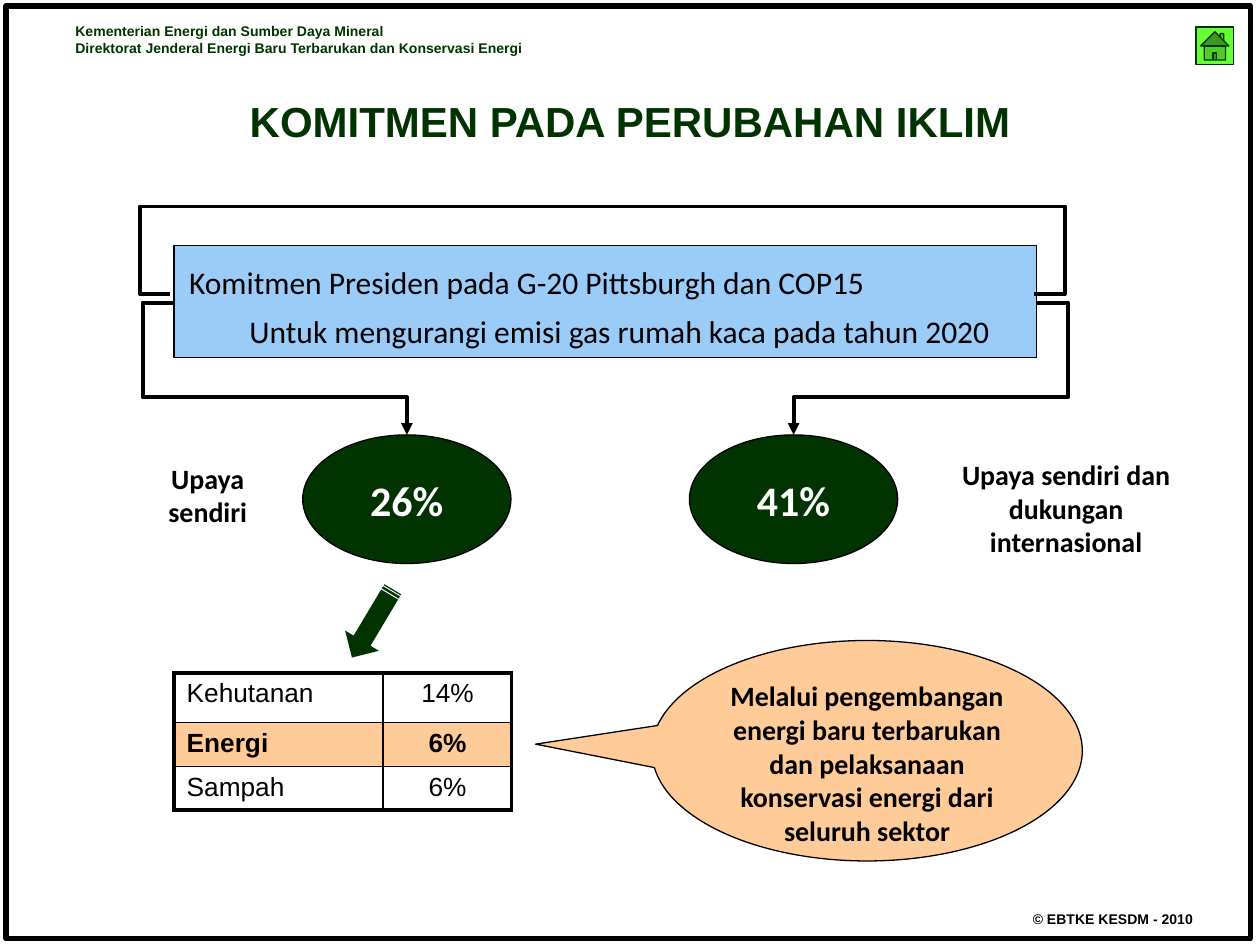
"""Build the slide on the climate change commitment."""
from dataclasses import dataclass

from lxml import etree
from pptx import Presentation
from pptx import util as u
from pptx.dml.color import RGBColor
from pptx.enum import shapes, text
from pptx.oxml import ns

BLACK, WHITE, GREEN = "000000", "FFFFFF", "003300"
PEACH, BLUE, LIME = "FFCC99", "9BCBF7", "66FF33"
LEFT, CENTER = text.PP_ALIGN.LEFT, text.PP_ALIGN.CENTER
TOP, MIDDLE = text.MSO_ANCHOR.TOP, text.MSO_ANCHOR.MIDDLE
SHAPE = shapes.MSO_SHAPE


@dataclass
class Box:
    left: float
    top: float
    width: float
    height: float

    def lengths(self) -> list:
        return [u.Pt(value) for value in (self.left, self.top, self.width, self.height)]


@dataclass
class Style:
    size: float
    font: str = "Calibri"
    color: str = BLACK
    bold: bool = True
    align: int = CENTER


@dataclass
class Label:
    box: Box
    lines: list
    style: Style


@dataclass
class Route:
    points: list
    arrow: bool = False


@dataclass
class Sector:
    name: str
    share: str
    height: float
    highlighted: bool = False


BODY = Style(16)
TARGET = Style(24, color=WHITE)
LABELS = [
    Label(Box(36, 9.4, 504, 26.6),
          ["Kementerian Energi dan Sumber Daya Mineral",
           "Direktorat Jenderal Energi Baru Terbarukan dan Konservasi Energi"],
          Style(8, "Arial", GREEN, align=LEFT)),
    Label(Box(576, 517, 120, 17), ["© EBTKE KESDM - 2010"], Style(8, "Arial")),
    Label(Box(70.5, 260, 96.5, 46), ["Upaya sendiri"], BODY),
    Label(Box(534, 258, 150.5, 65), ["Upaya sendiri dan dukungan internasional"], BODY),
]
TARGETS = [Label(Box(left, 248.5, 119, 73.5), [share], TARGET)
           for left, share in ((173, "26%"), (394, "41%"))]
ROUTES = [
    Route([(97, 168), (80, 168), (80, 118), (608.5, 118), (608.5, 168), (591, 168)]),
    Route([(99.5, 173), (81.5, 173), (81.5, 227), (232.5, 227), (232.5, 248.5)], True),
    Route([(592.5, 173), (610.5, 173), (610.5, 227), (453.5, 227), (453.5, 248.5)], True),
]
SECTORS = [Sector("Kehutanan", "14%", 28.5), Sector("Energi", "6%", 25, True),
           Sector("Sampah", "6%", 25)]


def rgb(color: str) -> RGBColor:
    return RGBColor.from_string(color)


def set_text(frame, lines: list, style: Style) -> None:
    frame.text = "\n".join(lines)
    for paragraph in frame.paragraphs:
        paragraph.alignment = style.align
        font = paragraph.font
        font.name, font.size, font.bold = style.font, u.Pt(style.size), style.bold
        font.color.rgb = rgb(style.color)


def paint(shape, fill: str | None, line: str | None, width: float = 0.75) -> None:
    shape.shadow.inherit = False
    if fill:
        shape.fill.solid()
        shape.fill.fore_color.rgb = rgb(fill)
    else:
        shape.fill.background()
    if line:
        shape.line.color.rgb = rgb(line)
        shape.line.width = u.Pt(width)
    else:
        shape.line.fill.background()


def add_shape(slide, kind: int, box: Box, fill: str | None, line: str | None = BLACK,
              width: float = 0.75):
    shape = slide.shapes.add_shape(kind, *box.lengths())
    paint(shape, fill, line, width)
    return shape


def fill_frame(shape, lines: list, style: Style, anchor: int = TOP, wrap: bool = True) -> None:
    frame = shape.text_frame
    frame.word_wrap = wrap
    frame.vertical_anchor = anchor
    set_text(frame, lines, style)


def add_route(slide, route: Route) -> None:
    points = [(u.Pt(x), u.Pt(y)) for x, y in route.points]
    builder = slide.shapes.build_freeform(*points[0])
    builder.add_line_segments(points[1:], close=False)
    shape = builder.convert_to_shape()
    paint(shape, None, BLACK, 2.25)
    if route.arrow:
        line = shape.element.spPr.find(ns.qn("a:ln"))
        etree.SubElement(line, ns.qn("a:tailEnd"), type="triangle")


def set_borders(cell, widths: dict) -> None:
    properties = cell._tc.get_or_add_tcPr()
    for side in "LRTB":
        line = etree.SubElement(properties, ns.qn(f"a:ln{side}"), w=str(u.Pt(widths[side])))
        fill = etree.SubElement(line, ns.qn("a:solidFill"))
        etree.SubElement(fill, ns.qn("a:srgbClr"), val=BLACK)


def add_sector_table(slide, box: Box, column_widths: list) -> None:
    last = len(SECTORS) - 1
    table = slide.shapes.add_table(len(SECTORS), 2, *box.lengths()).table
    table.first_row = table.horz_banding = False
    for column, width in zip(table.columns, column_widths):
        column.width = u.Pt(width)
    for row, sector in enumerate(SECTORS):
        table.rows[row].height = u.Pt(sector.height)
        for column, (value, align) in enumerate(((sector.name, LEFT), (sector.share, CENTER))):
            cell = table.cell(row, column)
            outer = {"L": column == 0, "R": column == 1, "T": row == 0, "B": row == last}
            set_borders(cell, {side: 2.25 if edge else 1 for side, edge in outer.items()})
            if sector.highlighted:
                cell.fill.solid()
                cell.fill.fore_color.rgb = rgb(PEACH)
            else:
                cell.fill.background()
            set_text(cell.text_frame, [value],
                     Style(15, "Arial", bold=sector.highlighted, align=align))


def add_title(slide) -> None:
    title = slide.shapes.title
    title.left, title.top, title.width, title.height = Box(0, 49, 720, 39.5).lengths()
    fill_frame(title, ["KOMITMEN PADA PERUBAHAN IKLIM"], Style(24, "Arial", GREEN), MIDDLE)
    title.text_frame.auto_size = text.MSO_AUTO_SIZE.NONE


def add_banner(slide) -> None:
    banner = add_shape(slide, SHAPE.RECTANGLE, Box(99.5, 140.5, 493, 64), BLUE)
    fill_frame(banner, ["Komitmen Presiden pada G-20 Pittsburgh dan COP15",
                        "Untuk mengurangi emisi gas rumah kaca pada tahun 2020"],
               Style(18, bold=False, align=LEFT))
    for paragraph, indent in zip(banner.text_frame.paragraphs, (1.5, 36)):
        paragraph.line_spacing = 1.3
        paragraph._p.get_or_add_pPr().set("marL", str(u.Pt(indent)))


def main() -> None:
    presentation = Presentation()
    presentation.slide_width, presentation.slide_height = u.Pt(720), u.Pt(540)
    slide = presentation.slides.add_slide(presentation.slide_layouts[5])
    add_shape(slide, SHAPE.RECTANGLE, Box(3.5, 3.5, 711, 533), None, width=3)
    add_title(slide)
    add_sector_table(slide, Box(99.5, 384.5, 193, 78.5), [119.5, 73.5])
    arrow = add_shape(slide, SHAPE.STRIPED_RIGHT_ARROW, Box(190, 345, 45.5, 22.5), GREEN, None)
    arrow.rotation = 120.9
    callout = add_shape(slide, SHAPE.OVAL_CALLOUT, Box(372.5, 366, 246, 126), PEACH)
    callout.adjustments[0], callout.adjustments[1] = -0.77, -0.03
    fill_frame(callout, ["Melalui pengembangan energi baru terbarukan dan pelaksanaan "
                         "konservasi energi dari seluruh sektor"], BODY)
    add_banner(slide)
    for target in TARGETS:
        oval = add_shape(slide, SHAPE.OVAL, target.box, GREEN)
        fill_frame(oval, target.lines, target.style, MIDDLE, wrap=False)
    for route in ROUTES:
        add_route(slide, route)
    for label in LABELS:
        fill_frame(slide.shapes.add_textbox(*label.box.lengths()), label.lines, label.style)
    add_shape(slide, SHAPE.ACTION_BUTTON_HOME, Box(683.5, 15.5, 21.5, 21.5), LIME, GREEN)
    presentation.save("out.pptx")


if __name__ == "__main__":
    main()
